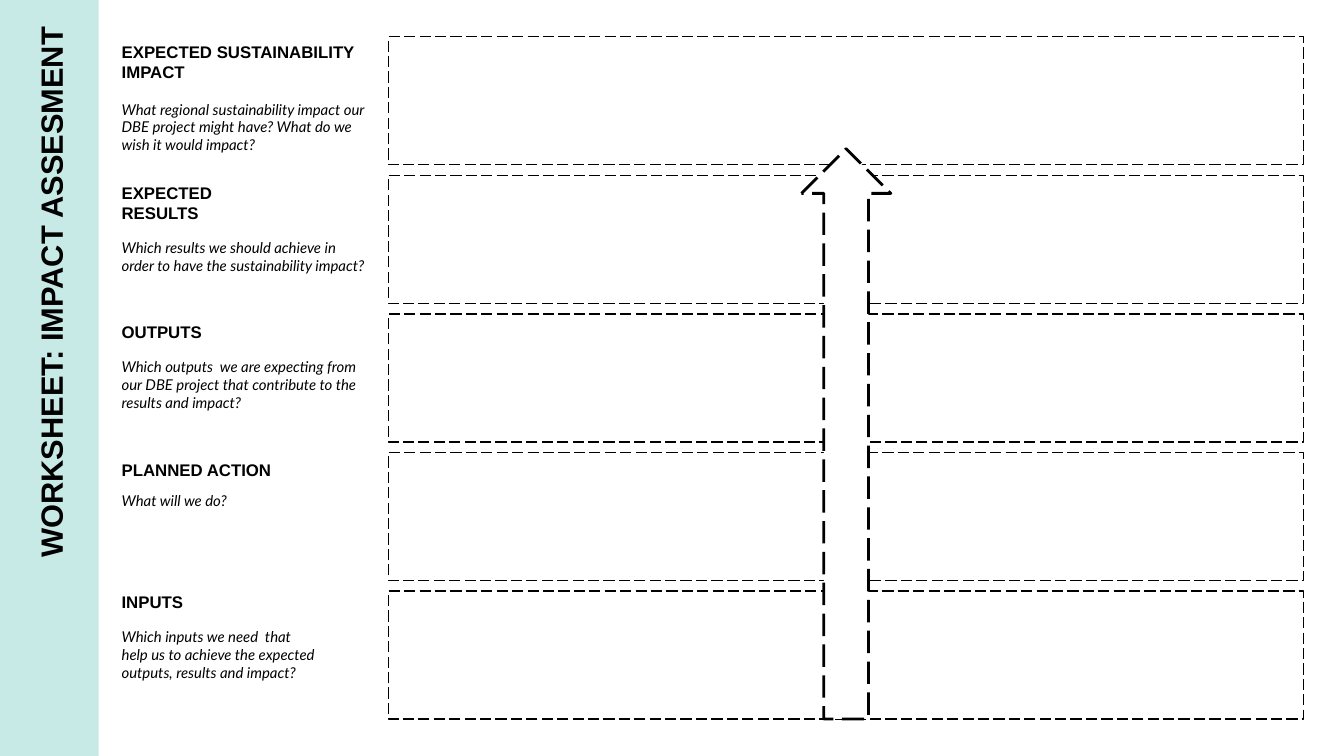
"""Build the impact assessment worksheet slide."""
import dataclasses

import pptx
import pptx.dml.color
import pptx.enum.dml
import pptx.enum.shapes
import pptx.enum.text
import pptx.util

Pt = pptx.util.Pt
RGB = pptx.dml.color.RGBColor
SHAPE = pptx.enum.shapes.MSO_SHAPE


@dataclasses.dataclass(frozen=True)
class Theme:
    """Colours, fonts and type sizes."""
    ink: RGB = RGB(0, 0, 0)
    paper: RGB = RGB(255, 255, 255)
    band: RGB = RGB(0xC8, 0xEA, 0xE7)
    head_font: str = "Arial"
    body_font: str = "Lato"
    title: float = 33
    head: float = 18
    body: float = 16


THEME = Theme()
TEXT_LEFT = 130.3
BOX_LEFT, BOX_TOP, BOX_W, BOX_H, BOX_PITCH = 416, 39.4, 980.7, 137.2, 148.5

ROWS = [
    ("EXPECTED SUSTAINABILITY IMPACT", 44.6, 262.8,
     "What regional sustainability impact our DBE project might have? "
     "What do we wish it would impact?", 107.3, 262.8),
    ("EXPECTED RESULTS", 195.8, 141,
     "Which results we should achieve in order to have the "
     "sustainability impact?", 255.6, 262.8),
    ("OUTPUTS", 344.2, 168.5,
     "Which outputs  we are expecting from our DBE project that "
     "contribute to the results and impact?", 383, 262.8),
    ("PLANNED ACTION", 492.5, 168.5, "What will we do?", 527, 168.5),
    ("INPUTS", 633.6, 141,
     "Which inputs we need  that help us to achieve the expected "
     "outputs, results and impact?", 672.5, 212.4),
]


def add_block(s, kind, left, top, width, height, fill=None, line=0):
    """Add a preset shape with an optional fill and dashed outline."""
    sp = s.shapes.add_shape(kind, Pt(left), Pt(top), Pt(width), Pt(height))
    sp.shadow.inherit = False
    if fill is None:
        sp.fill.background()
    else:
        sp.fill.solid()
        sp.fill.fore_color.rgb = fill
    if line:
        sp.line.color.rgb = THEME.ink
        sp.line.width = Pt(line)
        sp.line.dash_style = pptx.enum.dml.MSO_LINE.LONG_DASH
    else:
        sp.line.fill.background()
    return sp


def add_text(s, text, left, top, width, height, font, size, spacing,
             bold=False, italic=False):
    """Add a wrapped text box without margins."""
    sp = s.shapes.add_textbox(Pt(left), Pt(top), Pt(width), Pt(height))
    tf = sp.text_frame
    tf.word_wrap = True
    tf.margin_left = tf.margin_right = tf.margin_top = tf.margin_bottom = 0
    p = tf.paragraphs[0]
    p.text = text
    p.line_spacing = Pt(spacing)
    p.font.name, p.font.size = font, Pt(size)
    p.font.bold, p.font.italic = bold, italic
    p.font.color.rgb = THEME.ink
    return sp


def add_title(s):
    """Add the side band and its upright title."""
    add_block(s, SHAPE.RECTANGLE, 0, 0, 105.8, 810, fill=THEME.band)
    sp = add_text(s, "WORKSHEET: IMPACT ASSESMENT ", -334.8, 382.3, 770.4, 45.4,
                  THEME.head_font, THEME.title, 46.2, bold=True)
    sp.rotation = 270
    sp.text_frame.paragraphs[0].alignment = pptx.enum.text.PP_ALIGN.RIGHT


def add_row(s, i, head, head_top, head_w, prompt, prompt_top, prompt_w):
    """Add a heading, its prompt and the box to fill in."""
    add_block(s, SHAPE.RECTANGLE, BOX_LEFT, BOX_TOP + i * BOX_PITCH,
              BOX_W, BOX_H, line=1.5)
    add_text(s, head, TEXT_LEFT, head_top, head_w, 21,
             THEME.head_font, THEME.head, 21.6, bold=True)
    add_text(s, prompt, TEXT_LEFT, prompt_top, prompt_w, 57,
             THEME.body_font, THEME.body, 19.2, italic=True)


def add_arrow(s):
    """Add the arrow that rises from inputs to impact."""
    sp = add_block(s, SHAPE.UP_ARROW, 858.7, 159.3, 95.8, 611,
                   fill=THEME.paper, line=3)
    sp.adjustments[0] = sp.adjustments[1] = 0.5


def main():
    """Build and save the slide."""
    prs = pptx.Presentation()
    prs.slide_width, prs.slide_height = Pt(1440), Pt(810)
    s = prs.slides.add_slide(prs.slide_layouts[6])
    add_title(s)
    for i, row in enumerate(ROWS):
        add_row(s, i, *row)
    add_arrow(s)
    prs.save("out.pptx")


if __name__ == "__main__":
    main()
